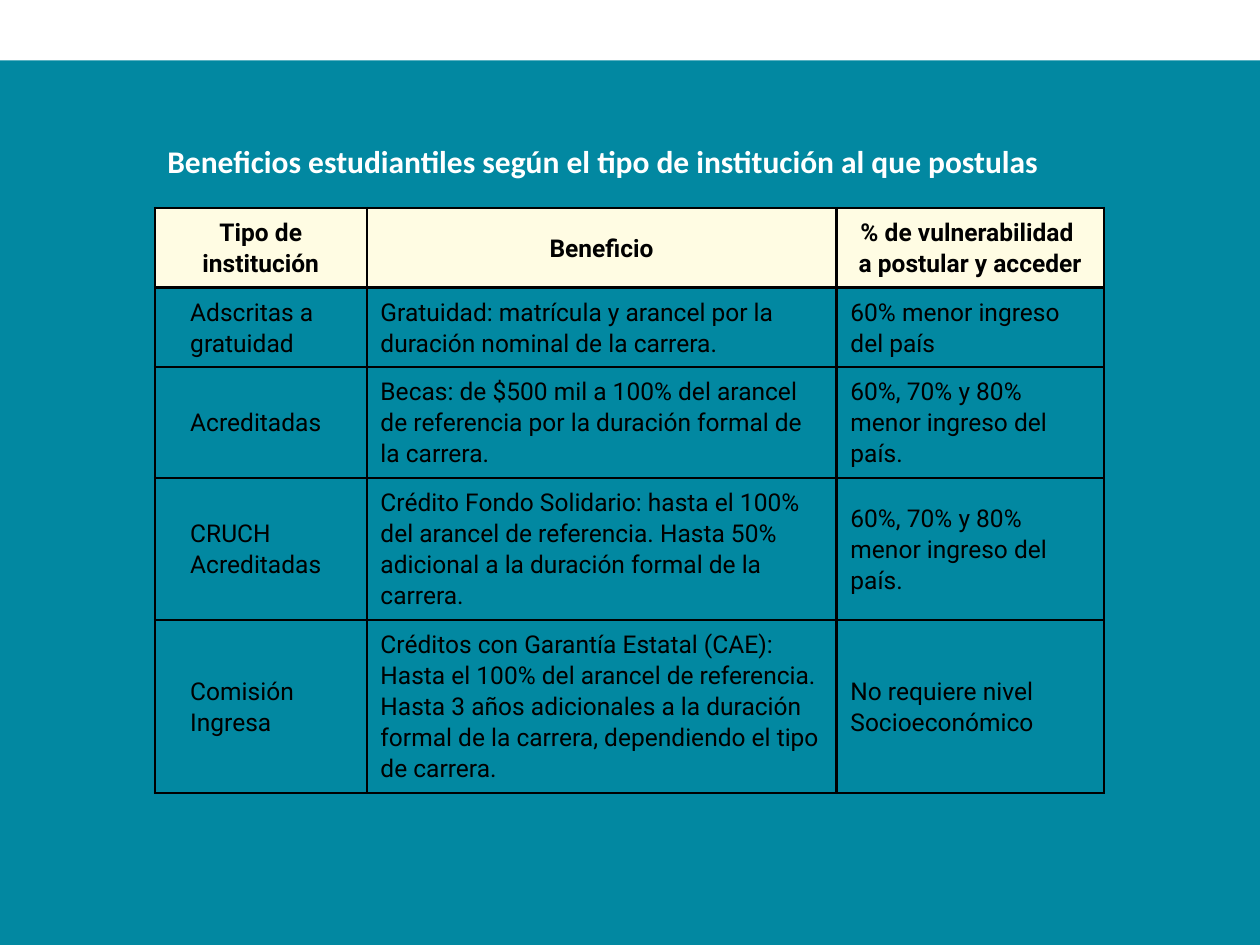
from lxml import etree
from pptx import Presentation
from pptx.dml.color import RGBColor
from pptx.enum.shapes import MSO_SHAPE
from pptx.enum.text import MSO_ANCHOR, MSO_AUTO_SIZE, PP_ALIGN
from pptx.oxml.ns import qn
from pptx.util import Inches, Pt

RECTANGLE = MSO_SHAPE.RECTANGLE
MIDDLE = MSO_ANCHOR.MIDDLE
FIT_SHAPE = MSO_AUTO_SIZE.SHAPE_TO_FIT_TEXT
CENTER, LEFT = PP_ALIGN.CENTER, PP_ALIGN.LEFT

COLORS = {"teal": "0288A1", "cream": "FFFCE3", "black": "000000", "white": "FFFFFF"}
COLUMNS = [1.68, 3.73, 2.12]
ROWS = [0.63, 0.63, 0.88, 1.13, 1.37]
TABLE_LEFT, TABLE_TOP = 1.23, 1.65
BENEFITS = [
    ["Tipo de institución", "Beneficio", "% de vulnerabilidad \na postular y acceder"],
    ["Adscritas a gratuidad",
     "Gratuidad: matrícula y arancel por la duración nominal de la carrera.",
     "60% menor ingreso del país"],
    ["Acreditadas",
     "Becas: de $500 mil a 100% del arancel de referencia por la duración formal de la carrera.",
     "60%, 70% y 80% menor ingreso del país."],
    ["CRUCH Acreditadas",
     "Crédito Fondo Solidario: hasta el 100% del arancel de referencia. "
     "Hasta 50% adicional a la duración formal de la carrera.",
     "60%, 70% y 80% menor ingreso del país."],
    ["Comisión Ingresa",
     "Créditos con Garantía Estatal (CAE): Hasta el 100% del arancel de referencia. "
     "Hasta 3 años adicionales a la duración formal de la carrera, dependiendo el tipo de carrera.",
     "No requiere nivel Socioeconómico"],
]


def style_font(font, name, size, color, bold):
    font.name = name
    font.size = Pt(size)
    font.bold = bold
    font.color.rgb = RGBColor.from_string(COLORS[color])


def add_borders(cell):
    properties = cell._tc.get_or_add_tcPr()
    for position, side in enumerate(["a:lnL", "a:lnR", "a:lnT", "a:lnB"]):
        line = etree.Element(qn(side), w=str(Pt(1.5)))
        fill = etree.SubElement(line, qn("a:solidFill"))
        etree.SubElement(fill, qn("a:srgbClr"), val=COLORS["black"])
        properties.insert(position, line)


prs = Presentation()
prs.slide_width, prs.slide_height = Inches(10), Inches(7.5)
slide = prs.slides.add_slide(prs.slide_layouts[6])

backdrop_top = Inches(0.48)
backdrop = slide.shapes.add_shape(
    RECTANGLE, 0, backdrop_top, prs.slide_width, prs.slide_height - backdrop_top)
backdrop.shadow.inherit = False
backdrop.fill.solid()
backdrop.fill.fore_color.rgb = RGBColor.from_string(COLORS["teal"])
backdrop.line.fill.background()

benefits_frame = slide.shapes.add_table(
    len(ROWS), len(COLUMNS), Inches(TABLE_LEFT), Inches(TABLE_TOP),
    Inches(sum(COLUMNS)), Inches(sum(ROWS)))
benefits_table = benefits_frame.table
benefits_table.horz_banding = False
for column, width in zip(benefits_table.columns, COLUMNS):
    column.width = Inches(width)

for row_index, (height, texts) in enumerate(zip(ROWS, BENEFITS)):
    benefits_table.rows[row_index].height = Inches(height)
    is_header = row_index == 0
    for column_index, text in enumerate(texts):
        cell = benefits_table.cell(row_index, column_index)
        cell.text = text
        cell.vertical_anchor = MIDDLE
        is_institution = column_index == 0 and not is_header
        cell.margin_left = Inches(0.28 if is_institution else 0.11)
        cell.margin_right = Inches(0.11)
        cell.margin_top = cell.margin_bottom = Inches(0.07)
        if is_header:
            cell.fill.solid()
            cell.fill.fore_color.rgb = RGBColor.from_string(COLORS["cream"])
        else:
            cell.fill.background()
        add_borders(cell)
        for paragraph in cell.text_frame.paragraphs:
            paragraph.alignment = CENTER if is_header else LEFT
            paragraph.line_spacing = 1.07
            style_font(paragraph.font, "Roboto", 14, "black", is_header)

heading = slide.shapes.add_textbox(
    Inches(TABLE_LEFT), Inches(1.08), Inches(7.25), Inches(0.4)).text_frame
heading.word_wrap = True
heading.auto_size = FIT_SHAPE
heading.text = "Beneficios estudiantiles según el tipo de institución al que postulas"
style_font(heading.paragraphs[0].font, "Calibri", 18, "white", True)

prs.save("out.pptx")
